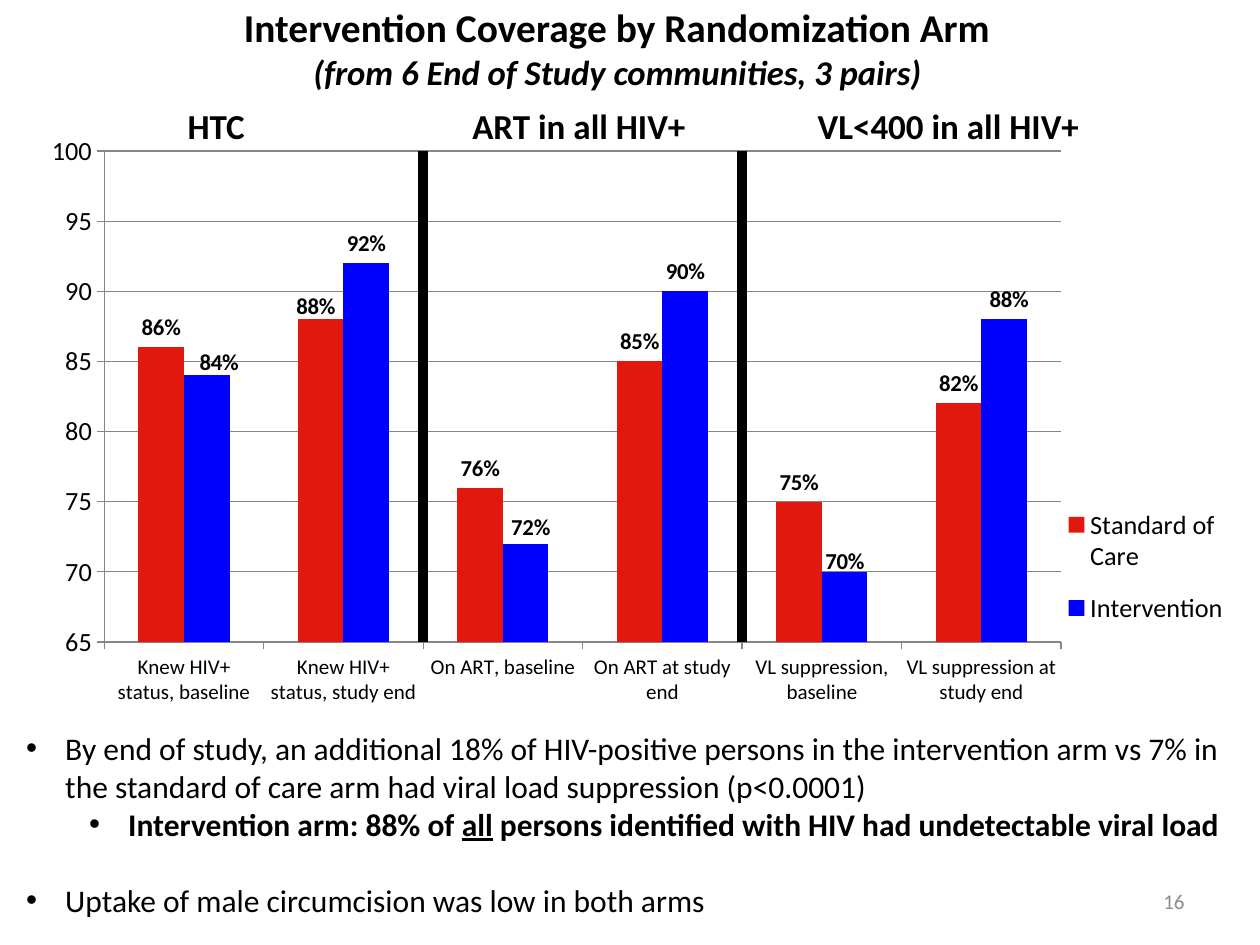
"""Build the slide on intervention coverage by randomization arm."""
import pptx
import pptx.chart.data
import pptx.dml.color
import pptx.enum.chart
import pptx.enum.shapes
import pptx.enum.text
import pptx.oxml
import pptx.oxml.ns
import pptx.util

WIDE, HIGH = 10, 7.5
FONT = "Calibri"
HUES = {"ink": "000000", "care": "E1180D", "act": "0000FF", "grid": "868686", "page": "8C8C8C"}
TITLE = [("Intervention Coverage by Randomization Arm", 22.5, False),
         ("(from 6 End of Study communities, 3 pairs)", 19.8, True)]
HEADS = [("HTC", 0.139, 0.09), ("ART in all HIV+", 0.365, 0.2),
         ("VL<400 in all HIV+", 0.639, 0.285)]
CATS = ["Knew HIV+ status, baseline", "Knew HIV+ status, study end",
        "On ART, baseline", "On ART at study end",
        "VL suppression, baseline", "VL suppression at study end"]
ARMS = [("Standard of Care", "care", (86, 88, 76, 85, 75, 82), {1: (-0.004, 0.01)}),
        ("Intervention", "act", (84, 92, 72, 90, 70, 88),
         {0: (0.01, 0.01), 2: (0.004, 0.005), 4: (0, 0.015), 5: (0.004, 0)})]
NOTES = [
    (0, 0, [("By end of study, an additional 18% of HIV-positive persons in the intervention arm "
             "vs 7% in the standard of care arm had viral load suppression (p<0.0001)", False, False)]),
    (1, 0, [("Intervention arm: 88% of ", True, False), ("all", True, True),
            (" persons identified with HIV had undetectable viral load", True, False)]),
    (0, 22, [("Uptake of male circumcision was low in both arms", False, False)]),
]
PAGE = "16"
CHART = (0.02, 0.137, 0.98, 0.656)
PLOT = (0.064, 0.035, 0.775, 0.792)
KEY = (0.83, 0.58, 0.155, 0.25)
FORM = '0"%"'


def rgb(hue):
    return pptx.dml.color.RGBColor.from_string(HUES[hue])


def area(x, y, w, h):
    return [pptx.util.Inches(v) for v in (x * WIDE, y * HIGH, w * WIDE, h * HIGH)]


def style(font, size, hue="ink", bold=False, italic=False):
    font.name, font.size, font.bold, font.italic = FONT, pptx.util.Pt(size), bold, italic
    font.color.rgb = rgb(hue)


def add_run(para, text, size, **look):
    run = para.add_run()
    run.text = text
    style(run.font, size, **look)
    return run


def add_box(slide, *place):
    frame = slide.shapes.add_textbox(*area(*place)).text_frame
    frame.word_wrap = True
    return frame


def set_place(host, spot, place, inner=False, mode="edge"):
    for old in host.findall(pptx.oxml.ns.qn("c:layout")):
        host.remove(old)
    parts = [("layoutTarget", "inner")] if inner else []
    parts += [("xMode", mode), ("yMode", mode), *zip("xywh", place)]
    body = "".join(f'<c:{tag} val="{val}"/>' for tag, val in parts)
    host.insert(spot, pptx.oxml.parse_xml(
        f'<c:layout {pptx.oxml.ns.nsdecls("c")}><c:manualLayout>{body}</c:manualLayout></c:layout>'))


def add_tags(ser, moves):
    spot = pptx.enum.chart.XL_LABEL_POSITION.OUTSIDE_END
    tags = ser.data_labels
    style(tags.font, 13, bold=True)
    tags.show_value = True
    tags.number_format, tags.number_format_is_linked = FORM, False
    tags.position = spot
    for col, move in moves.items():
        tag = ser.points[col].data_label
        style(tag.font, 13, bold=True)
        tag.position = spot
        node = tag._get_or_add_dLbl()
        set_place(node, 1, move, mode="factor")
        form = pptx.oxml.parse_xml(f'<c:numFmt {pptx.oxml.ns.nsdecls("c")} sourceLinked="0"/>')
        form.set("formatCode", FORM)
        node.insert(2, form)


def add_chart(slide):
    enum = pptx.enum.chart
    data = pptx.chart.data.CategoryChartData()
    data.categories = CATS
    for name, _, vals, _ in ARMS:
        data.add_series(name, vals)
    chart = slide.shapes.add_chart(enum.XL_CHART_TYPE.COLUMN_CLUSTERED, *area(*CHART), data).chart
    style(chart.font, 15)
    chart.has_title = False
    plot = chart.plots[0]
    plot.gap_width, plot.overlap, plot.vary_by_categories = 150, 0, False
    for ser, (_, hue, _, moves) in zip(plot.series, ARMS):
        ser.format.fill.solid()
        ser.format.fill.fore_color.rgb = rgb(hue)
        add_tags(ser, moves)
    axis = chart.value_axis
    axis.minimum_scale, axis.maximum_scale, axis.major_unit = 65, 100, 5
    axis.has_major_gridlines = True
    style(axis.tick_labels.font, 15)
    style(chart.category_axis.tick_labels.font, 12)
    for line in (axis.format.line, axis.major_gridlines.format.line, chart.category_axis.format.line):
        line.color.rgb, line.width = rgb("grid"), pptx.util.Pt(0.75)
    chart.has_legend = True
    key = chart.legend
    key.position, key.include_in_layout = enum.XL_LEGEND_POSITION.RIGHT, False
    style(key.font, 15)
    set_place(key._element, 1, KEY)
    set_place(plot._element.getparent(), 0, PLOT, inner=True)


def add_bar(slide, third):
    left, top, wide, high = CHART
    x = left + wide * (PLOT[0] + PLOT[2] * third / 3)
    y = top + high * PLOT[1]
    px, py, _, ph = area(x, y, 0, high * PLOT[3])
    bar = slide.shapes.add_connector(pptx.enum.shapes.MSO_CONNECTOR.STRAIGHT, px, py, px, py + ph)
    bar.line.color.rgb, bar.line.width = rgb("ink"), pptx.util.Pt(6)
    bar._element.spPr.append(pptx.oxml.parse_xml(f'<a:effectLst {pptx.oxml.ns.nsdecls("a")}/>'))


def add_title(slide):
    title = slide.shapes.title
    title.left, title.top, title.width, title.height = area(0.036, 0.004, 0.908, 0.093)
    frame = title.text_frame
    frame.vertical_anchor = pptx.enum.text.MSO_ANCHOR.MIDDLE
    para = frame.paragraphs[0]
    para.alignment = pptx.enum.text.PP_ALIGN.CENTER
    for row, (text, size, slant) in enumerate(TITLE):
        if row:
            para.add_line_break()
        add_run(para, text, size, bold=True, italic=slant)


def add_notes(slide):
    frame = add_box(slide, 0.011, 0.765, 0.974, 0.216)
    for row, (level, gap, runs) in enumerate(NOTES):
        para = frame.add_paragraph() if row else frame.paragraphs[0]
        para.level, para.space_before = level, pptx.util.Pt(gap)
        props = para._p.get_or_add_pPr()
        props.set("marL", str(pptx.util.Inches(0.31 + 0.5 * level)))
        props.set("indent", str(pptx.util.Inches(-0.31)))
        for tag, kind in (("buFont", 'typeface="Arial"'), ("buChar", 'char="•"')):
            props.append(pptx.oxml.parse_xml(f'<a:{tag} {pptx.oxml.ns.nsdecls("a")} {kind}/>'))
        for text, bold, under in runs:
            add_run(para, text, 18, bold=bold).font.underline = under


def main():
    deck = pptx.Presentation()
    deck.slide_width, deck.slide_height = pptx.util.Inches(WIDE), pptx.util.Inches(HIGH)
    slide = deck.slides.add_slide(deck.slide_layouts[5])
    add_title(slide)
    add_chart(slide)
    for third in (1, 2):
        add_bar(slide, third)
    for text, left, wide in HEADS:
        add_run(add_box(slide, left, 0.104, wide, 0.059).paragraphs[0], text, 20, bold=True)
    frame = add_box(slide, 0.717, 0.927, 0.233, 0.053)
    frame.vertical_anchor = pptx.enum.text.MSO_ANCHOR.MIDDLE
    frame.paragraphs[0].alignment = pptx.enum.text.PP_ALIGN.RIGHT
    add_run(frame.paragraphs[0], PAGE, 12, hue="page")
    add_notes(slide)
    deck.save("out.pptx")


if __name__ == "__main__":
    main()
